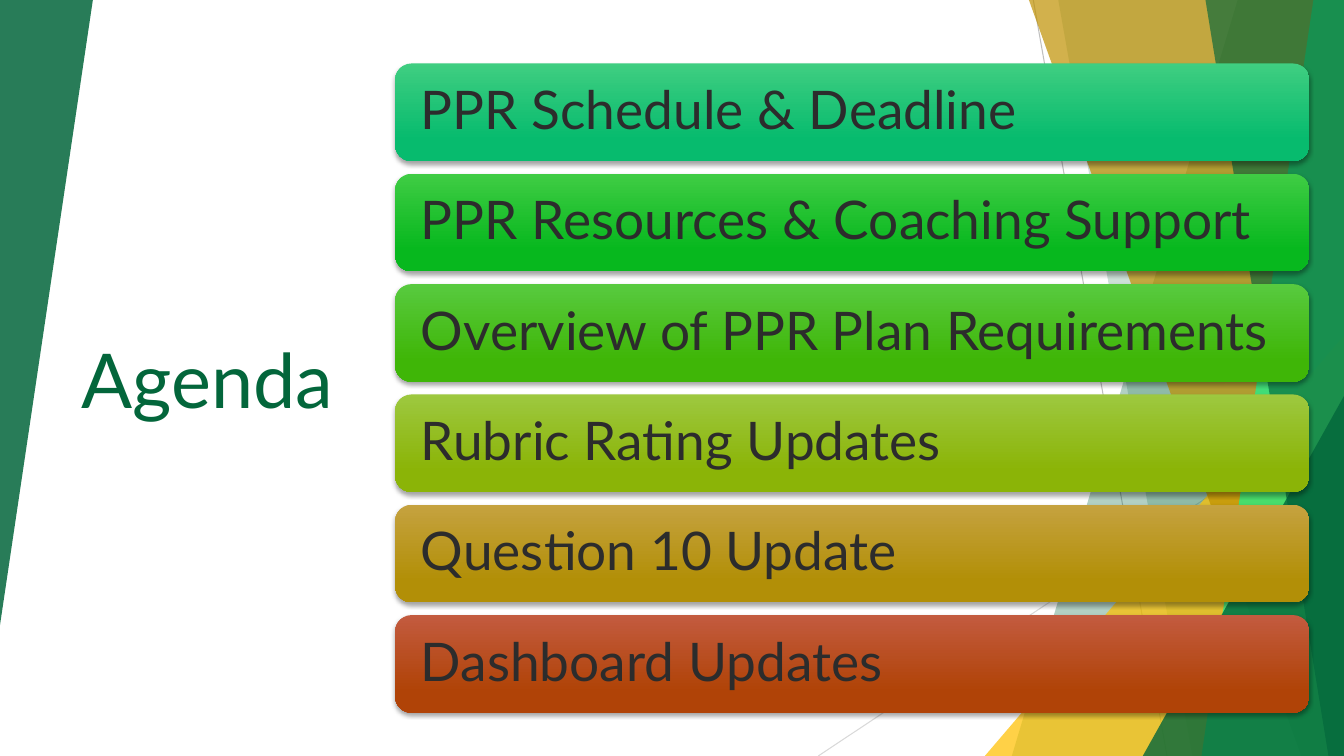
import pptx
import pptx.dml.color
import pptx.enum.shapes
import pptx.enum.text
import pptx.oxml
import pptx.oxml.ns
import pptx.util

Cm = pptx.util.Cm
Pt = pptx.util.Pt
SHAPE = pptx.enum.shapes.MSO_SHAPE
ANCHOR = pptx.enum.text.MSO_ANCHOR
ALIGN = pptx.enum.text.PP_ALIGN
NS = pptx.oxml.ns.nsdecls("a")
WIDTH, HEIGHT = 33.87, 19.05
GREEN = "03663B"


def rgb(color):
    return pptx.dml.color.RGBColor.from_string(color)


def fill_translucent(sp, color, percent):
    sp.shadow.inherit = False
    sp.line.fill.background()
    sp.fill.solid()
    sp.fill.fore_color.rgb = rgb(color)
    alpha = pptx.oxml.parse_xml(f'<a:alpha {NS} val="{percent * 1000}"/>')
    sp.element.spPr.xpath("a:solidFill/a:srgbClr")[0].append(alpha)


prs = pptx.Presentation()
prs.slide_width = Cm(WIDTH)
prs.slide_height = Cm(HEIGHT)
s = prs.slides.add_slide(prs.slide_layouts[5])

# Thin background lines
for x1, y1, x2, y2, color in [
    (26.04, 0, 29.41, HEIGHT, "BFBFBF"),
    (WIDTH, 10.24, 20.62, HEIGHT, "D9D9D9"),
]:
    line = s.shapes.add_connector(
        pptx.enum.shapes.MSO_CONNECTOR.STRAIGHT, Cm(x1), Cm(y1), Cm(x2), Cm(y2))
    line.line.color.rgb = rgb(color)
    line.line.width = Pt(0.75)
    line.element.spPr.append(pptx.oxml.parse_xml(f"<a:effectLst {NS}/>"))

# Facets reach the right edge: a band has its left x at top and bottom,
# a triangle has its left and top
facets = [
    ("band", 31.19, 25.5, GREEN, 30),
    ("band", 26.67, 30.05, GREEN, 20),
    ("triangle", 24.82, 8.46, "FFC000", 72),
    ("band", 25.93, 32.79, "BF9000", 70),
    ("band", 33.1, 30.28, "13F895", 70),
    ("band", 30.38, 33.48, GREEN, 65),
    ("triangle", 28.8, 9.98, GREEN, 80),
]
for kind, a, b, color, percent in facets:
    if kind == "band":
        builder = s.shapes.build_freeform(Cm(a), Cm(0))
        builder.add_line_segments(
            [(Cm(WIDTH), Cm(0)), (Cm(WIDTH), Cm(HEIGHT)), (Cm(b), Cm(HEIGHT))])
        sp = builder.convert_to_shape()
    else:
        sp = s.shapes.add_shape(
            SHAPE.ISOSCELES_TRIANGLE, Cm(a), Cm(b), Cm(WIDTH - a), Cm(HEIGHT - b))
        sp.adjustments[0] = 1
    fill_translucent(sp, color, percent)

left_facet = s.shapes.add_shape(
    SHAPE.ISOSCELES_TRIANGLE, Cm(0), Cm(0), Cm(2.34), Cm(15.75))
left_facet.adjustments[0] = 1
left_facet.rotation = 180
fill_translucent(left_facet, GREEN, 85)

# Title
title = s.shapes.title
title.left, title.top, title.width, title.height = Cm(1.8), Cm(3.84), Cm(9.86), Cm(11.38)
tf = title.text_frame
tf.word_wrap = True
tf.vertical_anchor = ANCHOR.MIDDLE
p = tf.paragraphs[0]
p.alignment = ALIGN.LEFT
r = p.add_run()
r.text = "Agenda"
r.font.name = "Lato"
r.font.size = Pt(54)
r.font.color.rgb = rgb(GREEN)

# Agenda bars
agenda = [
    ("PPR Schedule & Deadline", "3FCE81", "07BB6E"),
    ("PPR Resources & Coaching Support", "3FCC44", "07B81E"),
    ("Overview of PPR Plan Requirements", "58CA3F", "3FB607"),
    ("Rubric Rating Updates", "9DC83F", "8BB407"),
    ("Question 10 Update", "C5A23F", "B28F07"),
    ("Dashboard Updates", "C35B3F", "B04307"),
]
for i, (topic, light, dark) in enumerate(agenda):
    bar = s.shapes.add_shape(
        SHAPE.ROUNDED_RECTANGLE, Cm(9.96), Cm(1.6 + i * 2.78), Cm(23.04), Cm(2.46))
    bar.line.fill.background()
    bar.fill.gradient()
    bar.fill.gradient_angle = 270
    for stop, color, position in zip(bar.fill.gradient_stops, (light, dark), (0, 0.78)):
        stop.color.rgb = rgb(color)
        stop.position = position
    bar.shadow.inherit = False
    bar.element.spPr.xpath("a:effectLst")[0].append(pptx.oxml.parse_xml(
        f'<a:outerShdw {NS} blurRad="{Pt(3)}" dist="{Pt(2)}" dir="5400000" rotWithShape="0">'
        '<a:srgbClr val="000000"><a:alpha val="35000"/></a:srgbClr></a:outerShdw>'))
    tf = bar.text_frame
    tf.word_wrap = True
    tf.vertical_anchor = ANCHOR.MIDDLE
    tf.margin_left = tf.margin_right = Cm(0.53)
    tf.margin_top = tf.margin_bottom = Cm(0.4)
    p = tf.paragraphs[0]
    p.alignment = ALIGN.LEFT
    p.line_spacing = 0.9
    r = p.add_run()
    r.text = topic
    r.font.name = "Lato"
    r.font.size = Pt(38)
    r.font.color.rgb = rgb("2C2C2C")

prs.save("out.pptx")
